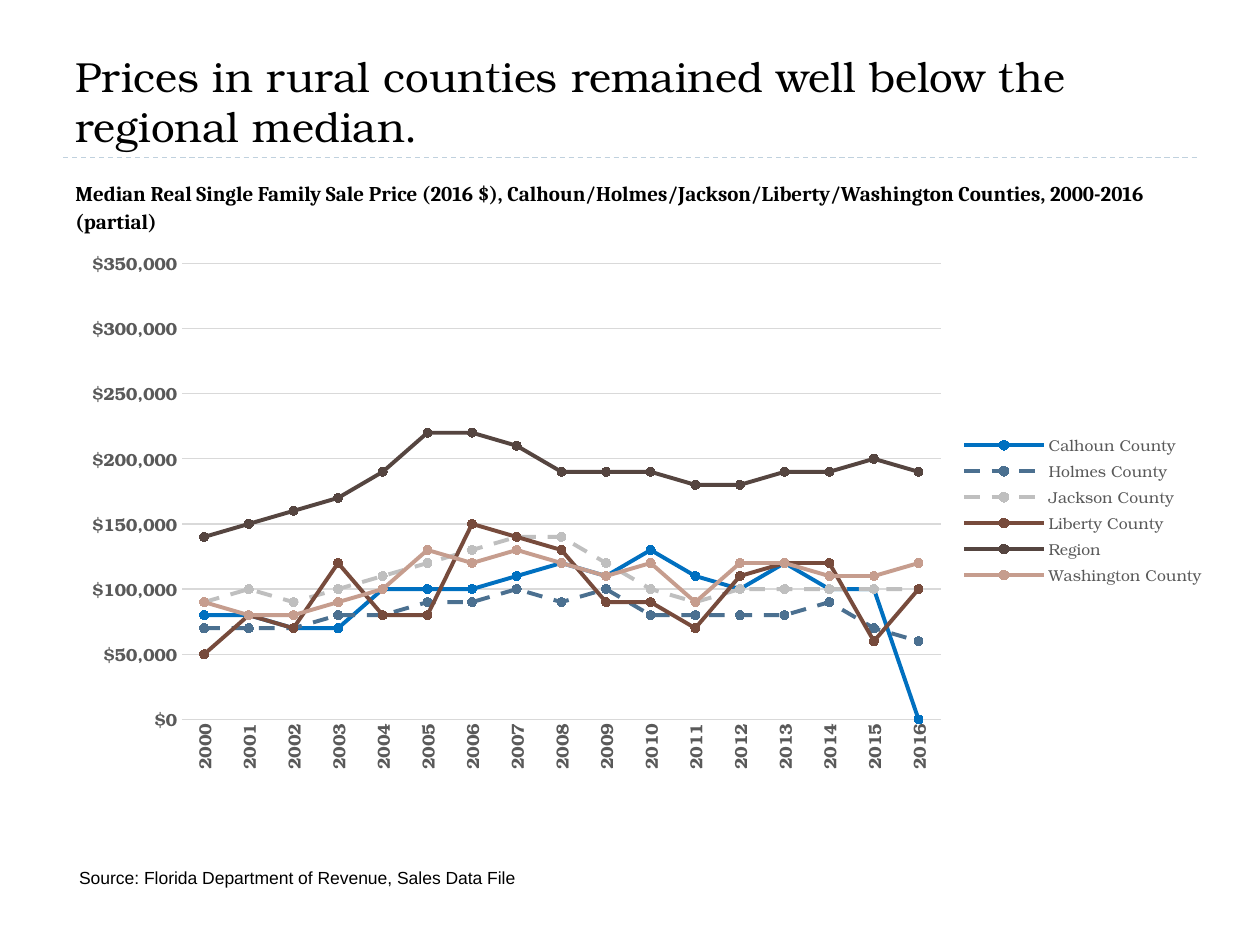
from lxml import etree
from pptx import Presentation
from pptx.chart.data import CategoryChartData
from pptx.dml.color import RGBColor
from pptx.enum.chart import XL_CHART_TYPE, XL_LEGEND_POSITION, XL_MARKER_STYLE, XL_TICK_MARK
from pptx.enum.dml import MSO_LINE
from pptx.enum.shapes import MSO_CONNECTOR
from pptx.enum.text import MSO_ANCHOR, MSO_AUTO_SIZE, PP_ALIGN
from pptx.oxml import parse_xml
from pptx.oxml.ns import nsdecls, qn
from pptx.util import Inches, Pt

LINES, RIGHT = XL_CHART_TYPE.LINE_MARKERS, XL_LEGEND_POSITION.RIGHT
CIRCLE, NONE = XL_MARKER_STYLE.CIRCLE, XL_TICK_MARK.NONE
DASH, STRAIGHT = MSO_LINE.DASH, MSO_CONNECTOR.STRAIGHT
BOTTOM, GROW, LEFT = MSO_ANCHOR.BOTTOM, MSO_AUTO_SIZE.SHAPE_TO_FIT_TEXT, PP_ALIGN.LEFT

BLACK, WHITE = RGBColor(0, 0, 0), RGBColor(255, 255, 255)
GRAY, GRID = RGBColor(0x59, 0x59, 0x59), RGBColor(0xD9, 0xD9, 0xD9)
RULE = RGBColor(0x9F, 0xB8, 0xCD)
BLUE, STEEL = RGBColor(0, 0x70, 0xC0), RGBColor(0x4B, 0x70, 0x90)
SILVER, BROWN = RGBColor(0xBF, 0xBF, 0xBF), RGBColor(0x77, 0x4B, 0x3C)
UMBER, ROSE = RGBColor(0x55, 0x45, 0x40), RGBColor(0xC6, 0x9D, 0x8E)

YEARS = [str(year) for year in range(2000, 2017)]
UNIT = 10000
SERIES = [
    ("Calhoun County", BLUE, False,
     [8, 8, 7, 7, 10, 10, 10, 11, 12, 11, 13, 11, 10, 12, 10, 10, None]),
    ("Holmes County", STEEL, True,
     [7, 7, 7, 8, 8, 9, 9, 10, 9, 10, 8, 8, 8, 8, 9, 7, 6]),
    ("Jackson County", SILVER, True,
     [9, 10, 9, 10, 11, 12, 13, 14, 14, 12, 10, 9, 10, 10, 10, 10, 10]),
    ("Liberty County", BROWN, False,
     [5, 8, 7, 12, 8, 8, 15, 14, 13, 9, 9, 7, 11, 12, 12, 6, 10]),
    ("Region", UMBER, False,
     [14, 15, 16, 17, 19, 22, 22, 21, 19, 19, 19, 18, 18, 19, 19, 20, 19]),
    ("Washington County", ROSE, False,
     [9, 8, 8, 9, 10, 13, 12, 13, 12, 11, 12, 9, 12, 12, 11, 11, 12]),
]
PLOT = {"x": 0.1, "y": 0.04, "w": 0.66, "h": 0.85}


def style(font, face, size, color=BLACK, bold=False):
    """Set face, size, colour and weight of a font."""
    font.name, font.size, font.bold = face, Pt(size), bold
    font.color.rgb = color


def write(frame, text, face, size, bold=False, space=0, lead=None):
    """Put one formatted paragraph into a text frame."""
    frame.word_wrap = True
    para = frame.paragraphs[0]
    para.alignment = LEFT
    para.space_before = para.space_after = Pt(space)
    para.line_spacing = lead
    run = para.add_run()
    run.text = text
    style(run.font, face, size, bold=bold)


class Deck:
    """Hold the style and the current slide."""
    head, body, note = "TeX Gyre Bonum", "Cambria", "Arial"

    def __init__(self):
        """Open a deck with one title slide."""
        self.prs = Presentation()
        self.prs.slide_width, self.prs.slide_height = Inches(10), Inches(7.5)
        self.slide = self.prs.slides.add_slide(self.prs.slide_layouts[5])

    def title(self, text, *box):
        """Fill and place the title."""
        shape = self.slide.shapes.title
        shape.left, shape.top, shape.width, shape.height = map(Inches, box)
        shape.fill.solid()
        shape.fill.fore_color.rgb = WHITE
        shape.text_frame.vertical_anchor = BOTTOM
        write(shape.text_frame, text, self.head, 24)

    def rule(self, *ends):
        """Draw a dashed line behind the title."""
        line = self.slide.shapes.add_connector(STRAIGHT, *map(Inches, ends))
        line.line.color.rgb = RULE
        line.line.width, line.line.dash_style = Pt(0.75), DASH
        etree.SubElement(line._element.spPr, qn("a:effectLst"))
        self.slide.shapes.title._element.addprevious(line._element)

    def text(self, text, *box, **form):
        """Add a wrapped text box."""
        frame = self.slide.shapes.add_textbox(*map(Inches, box)).text_frame
        frame.auto_size = GROW
        write(frame, text, **form)

    def axis(self, axis):
        """Format what both axes share."""
        axis.major_tick_mark = axis.minor_tick_mark = NONE
        style(axis.tick_labels.font, self.head, 10, GRAY, True)

    def chart(self, *box):
        """Add the line chart of prices."""
        data = CategoryChartData(number_format='"$"#,##0')
        data.categories = YEARS
        for name, _, _, vals in SERIES:
            data.add_series(name, [None if val is None else val * UNIT for val in vals])
        chart = self.slide.shapes.add_chart(LINES, *map(Inches, box), data).chart
        chart.has_title = False
        style(chart.font, self.head, 10)
        chart.has_legend = True
        chart.legend.position, chart.legend.include_in_layout = RIGHT, False
        style(chart.legend.font, self.head, 9, GRAY)
        cat, val = chart.category_axis, chart.value_axis
        self.axis(cat)
        self.axis(val)
        cat.format.line.color.rgb, cat.format.line.width = GRID, Pt(0.75)
        cat._element.find(qn("c:txPr")).find(qn("a:bodyPr")).set("rot", "-5400000")
        val.format.line.fill.background()
        val.minimum_scale, val.maximum_scale, val.major_unit = 0, 350000, 50000
        val.tick_labels.number_format = '"$"#,##0'
        val.tick_labels.number_format_is_linked = False
        grid = val.major_gridlines.format.line
        grid.color.rgb, grid.width = GRID, Pt(0.75)
        chart.plots[0].vary_by_categories = False
        for line, (_, color, dash, _) in zip(chart.plots[0].series, SERIES):
            line.smooth = False
            pen, mark = line.format.line, line.marker
            pen.color.rgb, pen.width = color, Pt(2.25)
            if dash:
                pen.dash_style = DASH
            mark.style, mark.size = CIRCLE, 5
            mark.format.fill.solid()
            mark.format.fill.fore_color.rgb = color
            mark.format.line.color.rgb = color
        self.layout(chart._chartSpace.chart)

    def layout(self, root):
        """Fix the plot area and draw blanks as zero."""
        size = "".join(f'<c:{key} val="{num}"/>' for key, num in PLOT.items())
        edge = '<c:layoutTarget val="inner"/><c:xMode val="edge"/><c:yMode val="edge"/>'
        area = root.plotArea
        for old in area.findall(qn("c:layout")):
            area.remove(old)
        area.insert(0, parse_xml(
            f'<c:layout {nsdecls("c")}><c:manualLayout>{edge}{size}</c:manualLayout></c:layout>'))
        root.find(qn("c:dispBlanksAs")).set("val", "zero")


def main():
    """Build the slide and save it."""
    deck = Deck()
    deck.title("Prices in rural counties remained well below the regional median.",
               0.5, 0.17, 9, 1.08)
    deck.rule(0.5, 1.25, 9.5, 1.25)
    deck.text("Median Real Single Family Sale Price (2016 $), "
              "Calhoun/Holmes/Jackson/Liberty/Washington Counties, 2000-2016 (partial)",
              0.5, 1.36, 9.17, 0.55, face=deck.body, size=12, bold=True, space=10, lead=1.12)
    deck.text("Source: Florida Department of Revenue, Sales Data File",
              0.53, 6.83, 8.33, 0.27, face=deck.note, size=10)
    deck.chart(0.53, 1.92, 9.13, 4.26)
    deck.prs.save("out.pptx")


if __name__ == "__main__":
    main()
